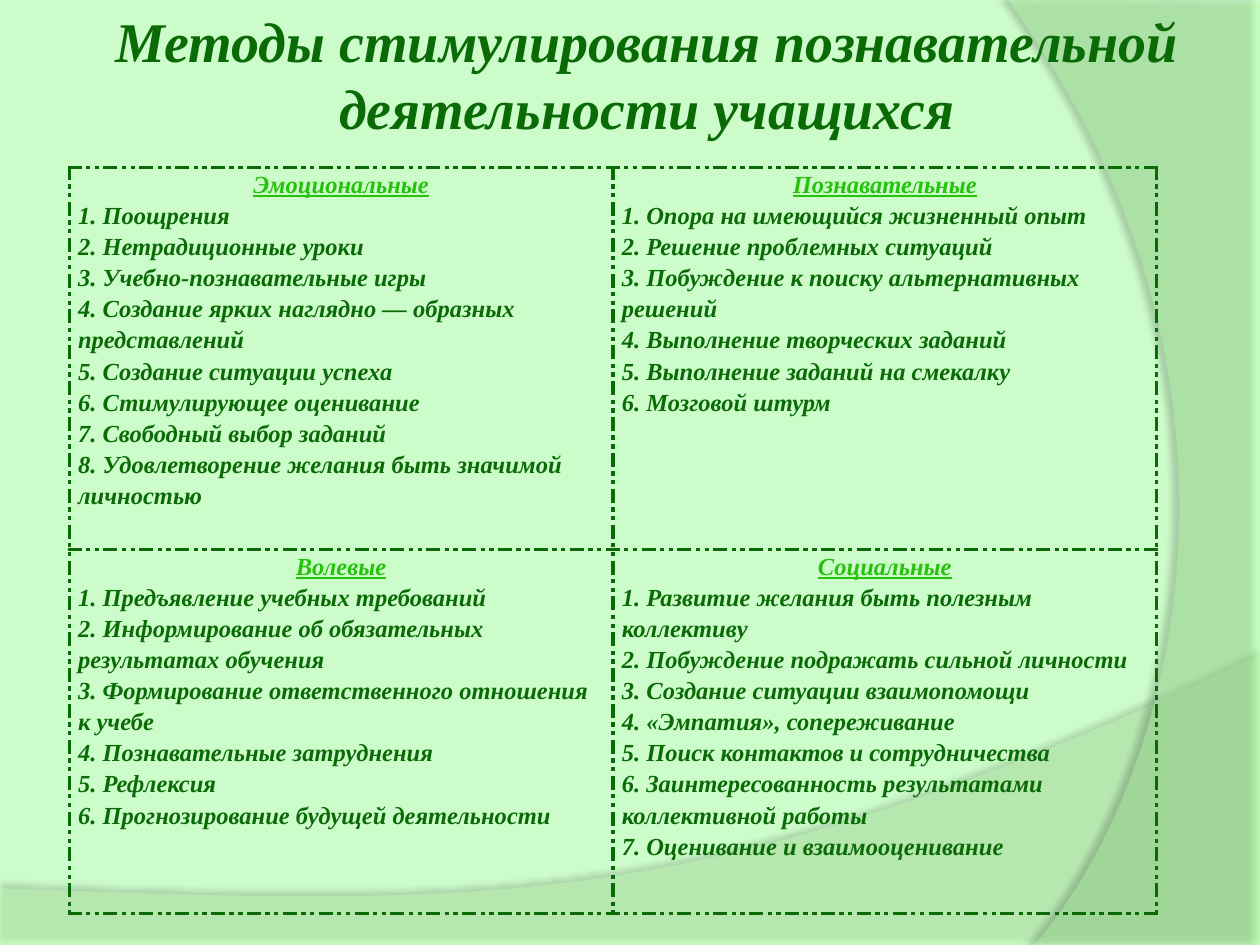
from dataclasses import dataclass

from lxml import etree
from pptx import Presentation
from pptx.dml.color import RGBColor
from pptx.enum.text import MSO_ANCHOR, MSO_AUTO_SIZE, PP_ALIGN
from pptx.oxml.ns import qn
from pptx.util import Emu, Inches, Pt

CENTER, LEFT = PP_ALIGN.CENTER, PP_ALIGN.LEFT
TOP = MSO_ANCHOR.TOP
FIT_SHAPE = MSO_AUTO_SIZE.SHAPE_TO_FIT_TEXT
WIDTH, HEIGHT = Inches(10), Inches(7.5)
FONT = "Times New Roman"
COLORS = {
    "background": "CCFCCA",
    "wave": "C0FFB7",
    "arc": "B7FFAB",
    "text": "0A6B06",
    "heading": "27C20D",
    "outline": "14D70C",
    "shadow": "000000",
}
Point = tuple[float, float]


@dataclass
class Ribbon:
    color: str
    opacity: int
    shadow_opacity: int
    shadow_distance: float
    shadow_angle: int
    corners: list[Point]
    curve: list[Point]


@dataclass
class Method:
    heading: str
    items: list[str]


RIBBONS = [
    Ribbon("wave", 45, 35, 3.5, 270,
           [(0, 7.05), (0, 7.51), (10, 7.51)],
           [(10, 5.2), (5.59, 7.29), (3.91, 7.19), (0, 7.05)]),
    Ribbon("arc", 40, 45, 4, 180,
           [(10, 0.02), (10, 7.5)],
           [(8.21, 7.5), (9.35, 6.19), (10.18, 3), (8, 0)]),
]
TITLE = ["Методы стимулирования познавательной", "деятельности учащихся"]
METHODS = [
    [
        Method("Эмоциональные", [
            "Поощрения",
            "Нетрадиционные уроки",
            "Учебно-познавательные игры",
            "Создание ярких наглядно — образных представлений",
            "Создание ситуации успеха",
            "Стимулирующее оценивание",
            "Свободный выбор заданий",
            "Удовлетворение желания быть значимой личностью",
        ]),
        Method("Познавательные", [
            "Опора на имеющийся жизненный опыт",
            "Решение проблемных ситуаций",
            "Побуждение к поиску альтернативных решений",
            "Выполнение творческих заданий",
            "Выполнение заданий на смекалку",
            "Мозговой штурм",
        ]),
    ],
    [
        Method("Волевые", [
            "Предъявление учебных требований",
            "Информирование об обязательных результатах обучения",
            "Формирование ответственного отношения к учебе",
            "Познавательные затруднения",
            "Рефлексия",
            "Прогнозирование будущей деятельности",
        ]),
        Method("Социальные", [
            "Развитие желания быть полезным коллективу",
            "Побуждение подражать сильной личности",
            "Создание ситуации взаимопомощи",
            "«Эмпатия», сопереживание",
            "Поиск контактов и сотрудничества",
            "Заинтересованность результатами коллективной работы",
            "Оценивание и взаимооценивание",
        ]),
    ],
]
ROW_HEIGHTS = [3.03, 2.89]


def rgb(name: str) -> RGBColor:
    return RGBColor.from_string(COLORS[name])


def add_color(parent, name: str, opacity: int = 100) -> None:
    color = etree.SubElement(parent, qn("a:srgbClr"), val=COLORS[name])
    if opacity < 100:
        etree.SubElement(color, qn("a:alpha"), val=str(opacity * 1000))


def make_line(tag: str, color: str, width: float, dash: str = "solid"):
    line = etree.Element(qn(tag), w=str(Pt(width)))
    add_color(etree.SubElement(line, qn("a:solidFill")), color)
    etree.SubElement(line, qn("a:prstDash"), val=dash)
    return line


def bezier(points: list[Point], steps: int = 60) -> list[Point]:
    weights = [
        ((1 - t) ** 3, 3 * t * (1 - t) ** 2, 3 * t ** 2 * (1 - t), t ** 3)
        for t in (step / steps for step in range(steps + 1))
    ]
    return [
        tuple(sum(w * point[axis] for w, point in zip(row, points)) for axis in (0, 1))
        for row in weights
    ]


def add_ribbon(slide, ribbon: Ribbon) -> None:
    outline = [(Inches(x), Inches(y)) for x, y in ribbon.corners + bezier(ribbon.curve)]
    builder = slide.shapes.build_freeform(*outline[0])
    builder.add_line_segments(outline[1:], close=True)
    shape = builder.convert_to_shape()
    shape.shadow.inherit = False
    shape.line.fill.background()
    shape.fill.solid()
    shape.fill.fore_color.rgb = rgb(ribbon.color)
    properties = shape._element.spPr
    color = properties.find(qn("a:solidFill"))[0]
    etree.SubElement(color, qn("a:alpha"), val=str(ribbon.opacity * 1000))
    shadow = etree.SubElement(
        properties.find(qn("a:effectLst")), qn("a:outerShdw"),
        blurRad=str(Pt(4)), dist=str(Pt(ribbon.shadow_distance)),
        dir=str(ribbon.shadow_angle * 60000), algn="ctr", rotWithShape="0")
    add_color(shadow, "shadow", ribbon.shadow_opacity)


def write_paragraph(paragraph, text: str, size: int, color: str, alignment) -> None:
    paragraph.text = text
    paragraph.alignment = alignment
    font = paragraph.runs[0].font
    font.name, font.size = FONT, Pt(size)
    font.bold = font.italic = True
    font.color.rgb = rgb(color)


def add_title(slide) -> None:
    box = slide.shapes.add_textbox(
        Emu(int(WIDTH * 0.078)), 0, Emu(int(WIDTH * 0.871)), Inches(1.18))
    frame = box.text_frame
    frame.word_wrap = False
    frame.auto_size = FIT_SHAPE
    frame.text = "\n".join(TITLE)
    for paragraph, text in zip(frame.paragraphs, TITLE):
        write_paragraph(paragraph, text, 32, "text", CENTER)
        properties = paragraph.runs[0]._r.get_or_add_rPr()
        properties.insert(0, make_line("a:ln", "outline", 0.75))


def fill_cell(cell, method: Method) -> None:
    cell.fill.background()
    cell.vertical_anchor = TOP
    cell.margin_left = cell.margin_right = Inches(0.07)
    cell.margin_top = cell.margin_bottom = 0
    for index, side in enumerate("LRTB"):
        border = make_line(f"a:ln{side}", "text", 2.25, "sysDashDotDot")
        cell._tc.get_or_add_tcPr().insert(index, border)
    frame = cell.text_frame
    heading = frame.paragraphs[0]
    write_paragraph(heading, method.heading, 14, "heading", CENTER)
    heading.runs[0].font.underline = True
    for number, item in enumerate(method.items, 1):
        write_paragraph(frame.add_paragraph(), f"{number}. {item}", 14, "text", LEFT)
    for paragraph in frame.paragraphs:
        paragraph.line_spacing = 1.15


def add_methods_table(slide) -> None:
    table = slide.shapes.add_table(
        len(METHODS), len(METHODS[0]), Emu(int(WIDTH * 0.055)), Inches(1.33),
        Emu(int(WIDTH * 0.863)), Inches(sum(ROW_HEIGHTS))).table
    table.first_row = table.horz_banding = False
    for row_index, methods in enumerate(METHODS):
        table.rows[row_index].height = Inches(ROW_HEIGHTS[row_index])
        for column_index, method in enumerate(methods):
            fill_cell(table.cell(row_index, column_index), method)


def main() -> None:
    presentation = Presentation()
    presentation.slide_width, presentation.slide_height = WIDTH, HEIGHT
    slide = presentation.slides.add_slide(presentation.slide_layouts[6])
    slide.background.fill.solid()
    slide.background.fill.fore_color.rgb = rgb("background")
    for ribbon in RIBBONS:
        add_ribbon(slide, ribbon)
    add_title(slide)
    add_methods_table(slide)
    presentation.save("out.pptx")


if __name__ == "__main__":
    main()
